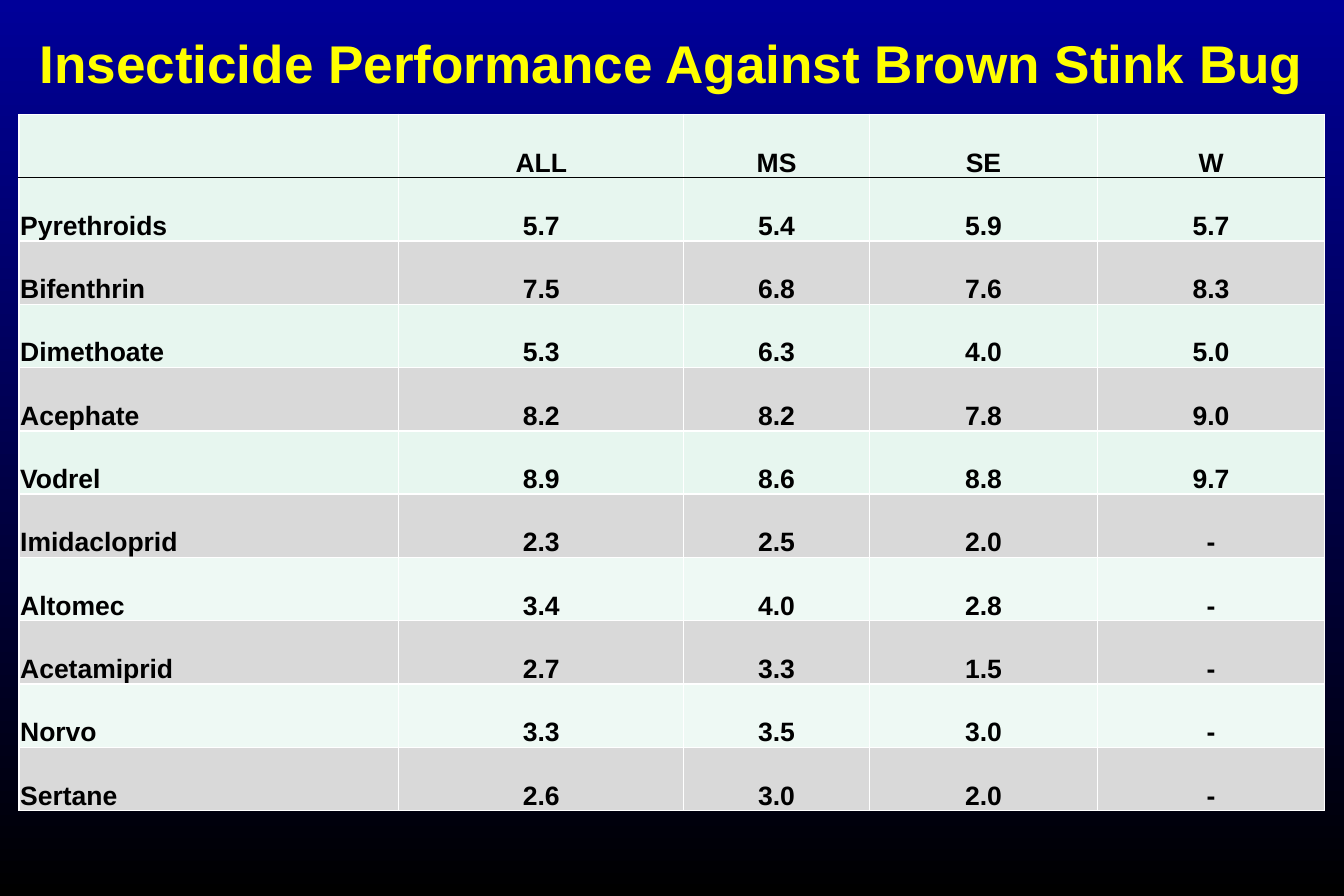
from lxml import etree
from pptx import Presentation
from pptx.dml.color import RGBColor
from pptx.enum.text import MSO_ANCHOR, MSO_AUTO_SIZE, PP_ALIGN
from pptx.oxml.ns import qn
from pptx.util import Cm, Pt

LEFT, CENTER = PP_ALIGN.LEFT, PP_ALIGN.CENTER
MIDDLE, BOTTOM = MSO_ANCHOR.MIDDLE, MSO_ANCHOR.BOTTOM
GROW = MSO_AUTO_SIZE.SHAPE_TO_FIT_TEXT
WHITE, BLACK, YELLOW, NAVY = "FFFFFF", "000000", "FFFF00", "000099"
GRAY, MINT, PALE = "D9D9D9", "E7F6EF", "EEF9F4"
WIDTH, HEIGHT = 28.58, 19.05
COLS = [8.08, 6.06, 3.95, 4.85, 4.83]
ROWS = [
    ["", "ALL", "MS", "SE", "W"],
    ["Pyrethroids", "5.7", "5.4", "5.9", "5.7"],
    ["Bifenthrin", "7.5", "6.8", "7.6", "8.3"],
    ["Dimethoate", "5.3", "6.3", "4.0", "5.0"],
    ["Acephate", "8.2", "8.2", "7.8", "9.0"],
    ["Vodrel", "8.9", "8.6", "8.8", "9.7"],
    ["Imidacloprid", "2.3", "2.5", "2.0", "-"],
    ["Altomec", "3.4", "4.0", "2.8", "-"],
    ["Acetamiprid", "2.7", "3.3", "1.5", "-"],
    ["Norvo", "3.3", "3.5", "3.0", "-"],
    ["Sertane", "2.6", "3.0", "2.0", "-"],
]


def color(code):
    """Turn a hex string into a colour."""
    return RGBColor.from_string(code)


def style(para, size, code, align):
    """Set the font and alignment of a paragraph."""
    para.alignment = align
    font = para.font
    font.name, font.size, font.bold = "Arial", Pt(size), True
    font.color.rgb = color(code)


def paint(slide):
    """Fill the background from navy at the top to black."""
    fill = slide.background.fill
    fill.gradient()
    fill.gradient_angle = 270
    for stop, code in zip(fill.gradient_stops, [NAVY, BLACK]):
        stop.color.rgb = color(code)


def add_title(slide, text, left, top, width, height):
    """Place the slide title in the given box."""
    title = slide.shapes.title
    title.left, title.top = Cm(left), Cm(top)
    title.width, title.height = Cm(width), Cm(height)
    frame = title.text_frame
    frame.text = text
    frame.word_wrap, frame.auto_size = True, GROW
    frame.vertical_anchor = MIDDLE
    style(frame.paragraphs[0], 32, YELLOW, CENTER)


def add_edges(cell, above, below):
    """Draw the four borders of a cell, white at the sides."""
    props = cell._tc.get_or_add_tcPr()
    edges = {"a:lnL": WHITE, "a:lnR": WHITE, "a:lnT": above, "a:lnB": below}
    for place, (tag, code) in enumerate(edges.items()):
        line = etree.Element(qn(tag), w=str(Pt(1)))
        solid = etree.SubElement(line, qn("a:solidFill"))
        etree.SubElement(solid, qn("a:srgbClr"), val=code)
        props.insert(place, line)


def row_fill(row):
    """Choose the band colour of a row."""
    if row and row % 2 == 0:
        return GRAY
    return PALE if ROWS[row][-1] == "-" else MINT


def add_scores(slide, left, top, width, height):
    """Place the table of ratings in the given box."""
    shape = slide.shapes.add_table(len(ROWS), len(COLS), Cm(left), Cm(top),
                                   Cm(width), Cm(height))
    table = shape.table
    table.first_row = table.horz_banding = False
    for column, share in zip(table.columns, COLS):
        column.width = Cm(width * share / sum(COLS))
    for row, words in enumerate(ROWS):
        table.rows[row].height = Cm(height / len(ROWS))
        for col, word in enumerate(words):
            cell = table.cell(row, col)
            cell.text = word
            cell.vertical_anchor = BOTTOM
            cell.margin_left = cell.margin_right = cell.margin_top = Cm(0.03)
            cell.margin_bottom = 0
            cell.fill.solid()
            cell.fill.fore_color.rgb = color(row_fill(row))
            add_edges(cell, BLACK if row == 1 else WHITE,
                      BLACK if row == 0 else WHITE)
            style(cell.text_frame.paragraphs[0], 16, BLACK,
                  CENTER if col else LEFT)


def main():
    """Build the slide and save it."""
    deck = Presentation()
    deck.slide_width, deck.slide_height = Cm(WIDTH), Cm(HEIGHT)
    slide = deck.slides.add_slide(deck.slide_layouts[5])
    paint(slide)
    add_title(slide, "Insecticide Performance Against Brown Stink Bug",
              0, 0.51, WIDTH, 1.63)
    add_scores(slide, 0.4, 2.43, sum(COLS), 14.81)
    deck.save("out.pptx")


if __name__ == "__main__":
    main()
